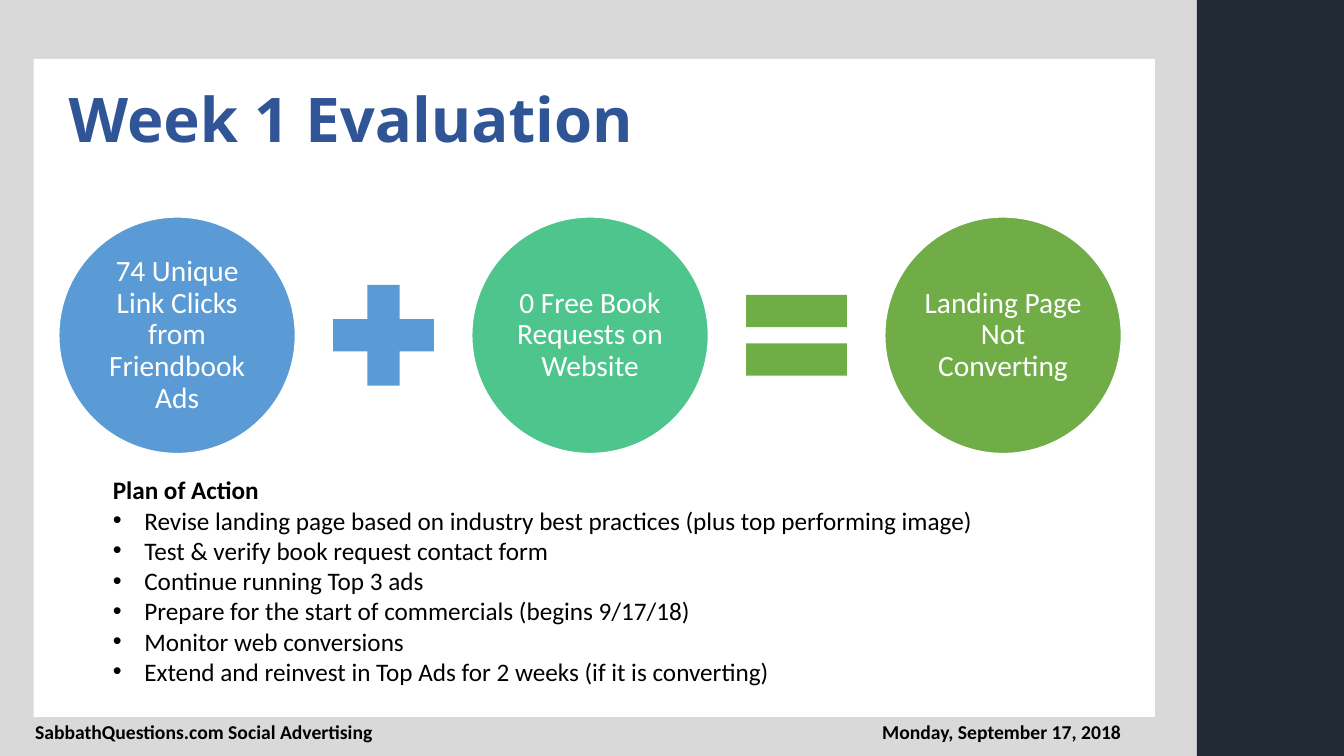
from pptx import Presentation
from pptx.dml.color import RGBColor
from pptx.enum.shapes import MSO_SHAPE
from pptx.enum.text import MSO_ANCHOR, PP_ALIGN
from pptx.oxml.ns import qn
from pptx.util import Pt
from lxml import etree

RECT, OVAL = MSO_SHAPE.RECTANGLE, MSO_SHAPE.OVAL
PLUS, EQUAL = MSO_SHAPE.MATH_PLUS, MSO_SHAPE.MATH_EQUAL
MIDDLE, TOP = MSO_ANCHOR.MIDDLE, MSO_ANCHOR.TOP
LEFT, CENTER, RIGHT = PP_ALIGN.LEFT, PP_ALIGN.CENTER, PP_ALIGN.RIGHT

WHITE, BLACK, BLUE, GREEN = "FFFFFF", "000000", "5B9BD5", "70AD47"
TERMS = [
    ("74 Unique Link Clicks from Friendbook Ads", BLUE),
    ("0 Free Book Requests on Website", "4DC58D"),
    ("Landing Page Not Converting", GREEN),
]
SIGNS = [(PLUS, BLUE), (EQUAL, GREEN)]
STEPS = [
    "Revise landing page based on industry best practices (plus top performing image)",
    "Test & verify book request contact form",
    "Continue running Top 3 ads",
    "Prepare for the start of commercials (begins 9/17/18)",
    "Monitor web conversions",
    "Extend and reinvest in Top Ads for 2 weeks (if it is converting)",
]


def color(code):
    return RGBColor.from_string(code)


def add_block(slide, kind, box, fill, line=None):
    block = slide.shapes.add_shape(kind, *map(Pt, box))
    block.shadow.inherit = False
    block.fill.solid()
    block.fill.fore_color.rgb = color(fill)
    if line:
        block.line.color.rgb = color(line)
        block.line.width = Pt(1)
    else:
        block.line.fill.background()
    return block


def add_frame(slide, box, anchor=TOP):
    frame = slide.shapes.add_textbox(*map(Pt, box)).text_frame
    frame.word_wrap = True
    frame.vertical_anchor = anchor
    return frame


def add_run(para, text, size, fill=BLACK, bold=False, face="Calibri"):
    run = para.add_run()
    run.text = text
    run.font.name = face
    run.font.size = Pt(size)
    run.font.bold = bold
    run.font.color.rgb = color(fill)


def add_bullet(para, indent):
    props = para._p.get_or_add_pPr()
    props.set("marL", str(Pt(indent)))
    props.set("indent", str(-Pt(indent)))
    etree.SubElement(props, qn("a:buFont")).set("typeface", "Arial")
    etree.SubElement(props, qn("a:buChar")).set("char", "•")


def draw_base(slide, box):
    left, top, width, height = box
    side = 105
    main = width - side
    add_block(slide, RECT, (left, top, main, height), "D9D9D9")
    add_block(slide, RECT, (left + 24, top + 42, main - 54, height - 70), WHITE)
    add_block(slide, RECT, (left + main, top, side, height), "222A35")


def draw_title(slide, box):
    para = add_frame(slide, box, MIDDLE).paragraphs[0]
    para.line_spacing = 0.9
    add_run(para, "Week 1 Evaluation", 44, "2F5597", True, "Noto Sans")


def draw_sum(slide, box):
    left, top, width, disc = box
    sign = 98
    gap = (width - len(TERMS) * disc - len(SIGNS) * sign) / (2 * len(SIGNS))
    step = disc + sign + 2 * gap
    for i, (text, fill) in enumerate(TERMS):
        oval = add_block(slide, OVAL, (left + i * step, top, disc, disc), fill, WHITE)
        frame = oval.text_frame
        frame.word_wrap = True
        frame.vertical_anchor = MIDDLE
        frame.margin_left = frame.margin_right = Pt(2)
        frame.margin_top = frame.margin_bottom = Pt(2)
        para = frame.paragraphs[0]
        para.alignment = CENTER
        para.line_spacing = 0.9
        add_run(para, text, 21, WHITE)
    for i, (kind, fill) in enumerate(SIGNS):
        spot = (left + i * step + disc + gap, top + (disc - sign) / 2, sign, sign)
        add_block(slide, kind, spot, fill)


def draw_plan(slide, box):
    frame = add_frame(slide, box)
    add_run(frame.paragraphs[0], "Plan of Action", 18, bold=True)
    for step in STEPS:
        para = frame.add_paragraph()
        add_bullet(para, 22.5)
        add_run(para, step, 18)


def draw_foot(slide, box):
    left, top, width, height = box
    part = 376
    notes = [
        (left, "SabbathQuestions.com Social Advertising", LEFT),
        (left + width - part, "Monday, September 17, 2018", RIGHT),
    ]
    for start, text, align in notes:
        para = add_frame(slide, (start, top, part, height)).paragraphs[0]
        para.alignment = align
        add_run(para, text, 14, bold=True)


def main():
    deck = Presentation()
    deck.slide_width, deck.slide_height = Pt(960), Pt(540)
    slide = deck.slides.add_slide(deck.slide_layouts[6])
    draw_base(slide, (0, 0, 960, 540))
    draw_title(slide, (42, 42, 759, 91))
    draw_sum(slide, (42, 155, 759, 169))
    draw_plan(slide, (73.5, 335.5, 713, 160))
    draw_foot(slide, (18, 511, 790, 24.5))
    deck.save("out.pptx")


if __name__ == "__main__":
    main()
